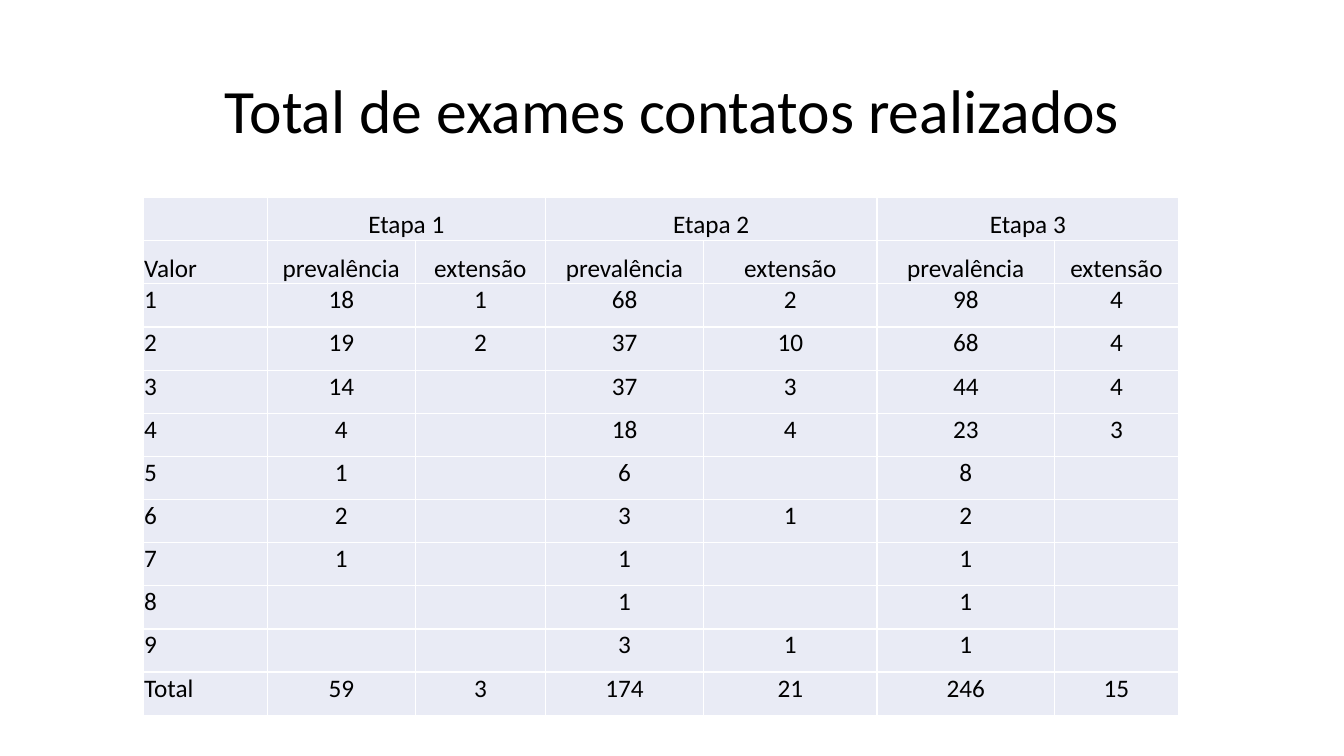
from lxml.etree import SubElement
from pptx import Presentation
from pptx.dml.color import RGBColor
from pptx.enum.text import MSO_ANCHOR, PP_ALIGN
from pptx.oxml.ns import qn
from pptx.util import Pt

PX = 9144  # EMU per px, 100 px to the inch
FONT = "Calibri"
BLACK = RGBColor(0x00, 0x00, 0x00)
WHITE = RGBColor(0xFF, 0xFF, 0xFF)
PALE_BLUE = RGBColor(0xE9, 0xEB, 0xF5)

COLUMN_WIDTHS = [123, 147, 129, 157, 172, 176, 123]
HEADER_ROWS = 2
EXAMS = [
    ["", "Etapa 1", "", "Etapa 2", "", "Etapa 3", ""],
    ["Valor"] + ["prevalência", "extensão"] * 3,
    ["1", "18", "1", "68", "2", "98", "4"],
    ["2", "19", "2", "37", "10", "68", "4"],
    ["3", "14", "", "37", "3", "44", "4"],
    ["4", "4", "", "18", "4", "23", "3"],
    ["5", "1", "", "6", "", "8", ""],
    ["6", "2", "", "3", "1", "2", ""],
    ["7", "1", "", "1", "", "1", ""],
    ["8", "", "", "1", "", "1", ""],
    ["9", "", "", "3", "1", "1", ""],
    ["Total", "59", "3", "174", "21", "246", "15"],
]


def add_text(paragraph, text, size, align):
    paragraph.alignment = align
    run = paragraph.add_run()
    run.text = text
    run.font.name = FONT
    run.font.size = Pt(size)
    run.font.color.rgb = BLACK


def add_borders(cell):
    properties = cell._tc.get_or_add_tcPr()
    for side in ("a:lnL", "a:lnR", "a:lnT", "a:lnB"):
        line = SubElement(properties, qn(side), w=str(Pt(1)))
        fill = SubElement(line, qn("a:solidFill"))
        SubElement(fill, qn("a:srgbClr"), val=str(WHITE))


presentation = Presentation()
presentation.slide_width = 1333 * PX
presentation.slide_height = 750 * PX
slide = presentation.slides.add_slide(presentation.slide_layouts[5])
slide.background.fill.solid()
slide.background.fill.fore_color.rgb = WHITE

# Title
title = slide.shapes.title
title.left, title.top = 92 * PX, 40 * PX
title.width, title.height = 1150 * PX, 145 * PX
title.text_frame.vertical_anchor = MSO_ANCHOR.MIDDLE
heading = title.text_frame.paragraphs[0]
heading.line_spacing = 0.9
add_text(heading, "Total de exames contatos realizados", 44, PP_ALIGN.CENTER)

# Table of exams by stage
exam_table = slide.shapes.add_table(
    len(EXAMS), len(COLUMN_WIDTHS), 142 * PX, 196 * PX,
    sum(COLUMN_WIDTHS) * PX, 514 * PX).table
exam_table.first_row = False
exam_table.horz_banding = False
for column, width in zip(exam_table.columns, COLUMN_WIDTHS):
    column.width = width * PX

for row, values in enumerate(EXAMS):
    for col, value in enumerate(values):
        cell = exam_table.cell(row, col)
        cell.margin_left = cell.margin_right = cell.margin_top = 1 * PX
        cell.margin_bottom = 0
        cell.vertical_anchor = (
            MSO_ANCHOR.BOTTOM if row < HEADER_ROWS else MSO_ANCHOR.TOP)
        add_borders(cell)
        cell.fill.solid()
        cell.fill.fore_color.rgb = PALE_BLUE
        if value:
            align = PP_ALIGN.CENTER if col else PP_ALIGN.LEFT
            add_text(cell.text_frame.paragraphs[0], value, 18, align)

# Each stage heading spans its two columns
for col in (1, 3, 5):
    exam_table.cell(0, col).merge(exam_table.cell(0, col + 1))

presentation.save("out.pptx")
